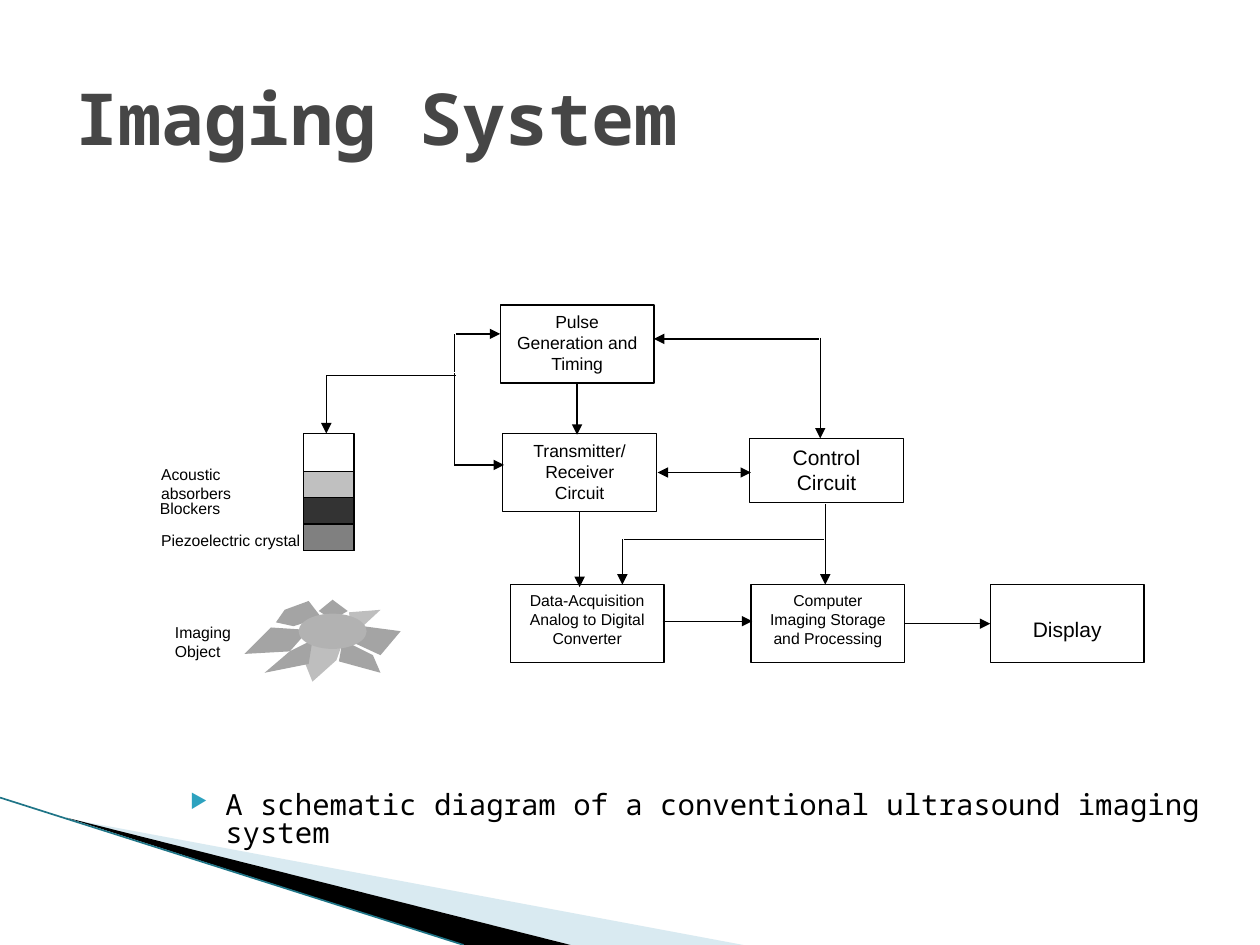
from dataclasses import dataclass

from lxml.etree import SubElement
from pptx import Presentation
from pptx.dml.color import RGBColor
from pptx.enum.shapes import MSO_CONNECTOR, MSO_SHAPE
from pptx.enum.text import MSO_ANCHOR, PP_ALIGN
from pptx.oxml.ns import qn
from pptx.util import Inches, Pt

BLACK = RGBColor(0x00, 0x00, 0x00)
WHITE = RGBColor(0xFF, 0xFF, 0xFF)
TITLE_GREY = RGBColor(0x46, 0x46, 0x46)
PALE_BLUE = RGBColor(0xA0, 0xCB, 0xDC)
TEAL = RGBColor(0x1F, 0x75, 0x87)
SILVER = RGBColor(0xC0, 0xC0, 0xC0)
CHARCOAL = RGBColor(0x33, 0x33, 0x33)
GREY = RGBColor(0x80, 0x80, 0x80)
RAY_LIGHT = RGBColor(0xBE, 0xBE, 0xBE)
RAY_DARK = RGBColor(0xA4, 0xA4, 0xA4)
DISC_GREY = RGBColor(0xB2, 0xB2, 0xB2)
SANS, MONO = "Arial", "Noto Sans Mono"
BOX_W, BOX_H = 1.22, 0.62


@dataclass
class Block:
    x: float
    y: float
    lines: list[str]
    size: float
    h: float = BOX_H
    centred: bool = False


@dataclass
class Label:
    x: float
    y: float
    w: float
    lines: list[str]


@dataclass
class Wire:
    start: tuple[float, float]
    end: tuple[float, float]
    head: bool = False
    tail: bool = False


BLOCKS = [
    Block(3.97, 2.42, ["Pulse", "Generation and Timing"], 10),
    Block(3.99, 3.44, ["Transmitter/", "Receiver", "Circuit"], 10),
    Block(5.95, 3.48, ["Control", "Circuit"], 12, h=0.51),
    Block(4.05, 4.64, ["Data-Acquisition", "Analog to Digital Converter"], 9),
    Block(5.96, 4.64, ["Computer", "Imaging Storage and Processing"], 9),
    Block(7.86, 4.64, ["Display"], 12, centred=True),
]
LABELS = [
    Label(1.18, 3.64, 1.24, ["Acoustic absorbers"]),
    Label(1.17, 3.91, 1.24, ["Blockers"]),
    Label(1.18, 4.16, 1.44, ["Piezoelectric crystal"]),
    Label(1.29, 4.89, 1.24, ["Imaging", "Object"]),
]
WIRES = [
    # Transducer, pulse generator and transmitter
    Wire((2.59, 3.44), (2.59, 2.98), head=True),
    Wire((2.59, 2.98), (3.62, 2.98)),
    Wire((3.61, 2.96), (3.61, 3.7)),
    Wire((3.61, 3.69), (4, 3.69), tail=True),
    Wire((3.61, 2.95), (3.61, 2.65)),
    Wire((3.62, 2.65), (3.97, 2.65), tail=True),
    Wire((4.58, 3.04), (4.58, 3.45), tail=True),
    # Control circuit
    Wire((5.19, 2.69), (6.5, 2.69), head=True),
    Wire((6.51, 2.68), (6.51, 3.48), tail=True),
    Wire((5.22, 3.75), (5.96, 3.75), head=True, tail=True),
    Wire((6.55, 4), (6.55, 4.64), tail=True),
    Wire((6.54, 4.28), (4.95, 4.28)),
    Wire((4.94, 4.28), (4.94, 4.64), tail=True),
    # Acquisition, processing and display
    Wire((4.6, 4.06), (4.6, 4.66), tail=True),
    Wire((5.26, 4.93), (5.97, 4.93), tail=True),
    Wire((7.18, 4.95), (7.86, 4.95), tail=True),
]
RAYS = [
    ([(2.26, 4.84), (2.45, 4.77), (2.55, 4.9), (2.33, 4.97), (2.19, 4.94)], RAY_DARK),
    ([(2.64, 4.76), (2.76, 4.85), (2.64, 4.92), (2.53, 4.85)], RAY_DARK),
    ([(2.77, 4.86), (3.02, 4.84), (2.88, 4.97), (2.78, 4.95)], RAY_LIGHT),
    ([(2.88, 4.97), (3.18, 5.01), (3.02, 5.2), (2.76, 5.08)], RAY_DARK),
    ([(2.72, 5.08), (2.96, 5.2), (3.02, 5.34), (2.69, 5.25)], RAY_DARK),
    ([(2.44, 5.1), (2.72, 5.1), (2.67, 5.24), (2.48, 5.41), (2.42, 5.26)], RAY_LIGHT),
    ([(2.3, 5.17), (2.48, 5.08), (2.45, 5.27), (2.1, 5.34)], RAY_DARK),
    ([(2.15, 4.98), (2.45, 5), (2.3, 5.17), (1.94, 5.19)], RAY_DARK),
]


def put_text(sp, lines: list[str], size: float, font=SANS, color=BLACK,
             bold=False, align=PP_ALIGN.LEFT, anchor=MSO_ANCHOR.TOP) -> None:
    tf = sp.text_frame
    tf.word_wrap = True
    tf.vertical_anchor = anchor
    fmt = {"name": font, "size": Pt(size), "bold": bold}
    for i, line in enumerate(lines):
        p = tf.add_paragraph() if i else tf.paragraphs[0]
        p.alignment = align
        r = p.add_run()
        r.text = line
        for key, value in fmt.items():
            setattr(r.font, key, value)
        r.font.color.rgb = color


def add_text(s, x: float, y: float, w: float, h: float, lines: list[str],
             size: float, **fmt):
    sp = s.shapes.add_textbox(Inches(x), Inches(y), Inches(w), Inches(h))
    put_text(sp, lines, size, **fmt)
    return sp


def paint(sp, fill: RGBColor, outlined: bool) -> None:
    sp.shadow.inherit = False
    sp.fill.solid()
    sp.fill.fore_color.rgb = fill
    if outlined:
        sp.line.color.rgb = BLACK
        sp.line.width = Pt(0.75)
    else:
        sp.line.fill.background()


def add_shape(s, kind, x: float, y: float, w: float, h: float,
              fill: RGBColor, outlined=True):
    sp = s.shapes.add_shape(kind, Inches(x), Inches(y), Inches(w), Inches(h))
    paint(sp, fill, outlined)
    return sp


def add_polygon(s, points: list[tuple[float, float]], fill: RGBColor):
    dots = [(Inches(x), Inches(y)) for x, y in points]
    builder = s.shapes.build_freeform(*dots[0])
    builder.add_line_segments(dots[1:], close=True)
    sp = builder.convert_to_shape()
    paint(sp, fill, outlined=False)
    return sp


def add_wire(s, wire: Wire, color=BLACK, width=0.75) -> None:
    ends = [Inches(v) for v in (*wire.start, *wire.end)]
    sp = s.shapes.add_connector(MSO_CONNECTOR.STRAIGHT, *ends)
    sp.line.color.rgb = color
    sp.line.width = Pt(width)
    ln = sp.line._get_or_add_ln()
    for shown, tag in ((wire.head, "a:headEnd"), (wire.tail, "a:tailEnd")):
        if shown:
            SubElement(ln, qn(tag), type="triangle")
    SubElement(sp._element.spPr, qn("a:effectLst"))


def add_bullet(p) -> None:
    pPr = p._p.get_or_add_pPr()
    pPr.set("marL", str(Inches(0.4)))
    pPr.set("indent", str(Inches(-0.28)))
    color = SubElement(pPr, qn("a:buClr"))
    SubElement(color, qn("a:srgbClr"), val="2DA2BF")
    SubElement(pPr, qn("a:buSzPct"), val="68000")
    SubElement(pPr, qn("a:buChar"), char="▶")


def main() -> None:
    prs = Presentation()
    prs.slide_width, prs.slide_height = Inches(10), Inches(7.5)
    s = prs.slides.add_slide(prs.slide_layouts[6])

    # Corner decoration
    sp = add_polygon(s, [(0.55, 6.5), (5.9, 7.5), (4.53, 7.5)], PALE_BLUE)
    SubElement(sp.fill._xPr.find(".//" + qn("a:srgbClr")), qn("a:alpha"), val="40000")
    add_polygon(s, [(0.53, 6.49), (4.53, 7.5), (3.68, 7.5)], BLACK)
    add_wire(s, Wire((0, 6.33), (3.68, 7.5)), TEAL, 0.95)

    # Title and caption
    add_text(s, 0.5, 0.3, 9, 1.25, ["Imaging System"], 41, font=MONO,
             color=TITLE_GREY, bold=True, anchor=MSO_ANCHOR.MIDDLE)
    sp = add_text(s, 1.29, 6.25, 8.5, 0.46,
                  ["A schematic diagram of a conventional ultrasound imaging system"],
                  16.6, font=MONO)
    p = sp.text_frame.paragraphs[0]
    p.line_spacing = 0.8
    add_bullet(p)

    # Transducer layers
    add_shape(s, MSO_SHAPE.RECTANGLE, 2.41, 3.44, 0.4, 0.93, WHITE)
    for i, fill in enumerate((SILVER, CHARCOAL, GREY)):
        add_shape(s, MSO_SHAPE.RECTANGLE, 2.41, 3.74 + 0.21 * i, 0.4, 0.21, fill)

    # Imaging object
    for points, fill in RAYS:
        add_polygon(s, points, fill)
    add_shape(s, MSO_SHAPE.OVAL, 2.37, 4.87, 0.54, 0.28, DISC_GREY, outlined=False)

    # Labels, blocks and wires
    for label in LABELS:
        add_text(s, label.x, label.y, label.w, 0.51, label.lines, 9)
    for block in BLOCKS:
        sp = add_shape(s, MSO_SHAPE.RECTANGLE, block.x, block.y, BOX_W, block.h, WHITE)
        anchor = MSO_ANCHOR.MIDDLE if block.centred else MSO_ANCHOR.TOP
        put_text(sp, block.lines, block.size, align=PP_ALIGN.CENTER, anchor=anchor)
        if block.centred:
            sp.text_frame.margin_top = Inches(0.13)
    for wire in WIRES:
        add_wire(s, wire)

    prs.save("out.pptx")


if __name__ == "__main__":
    main()
